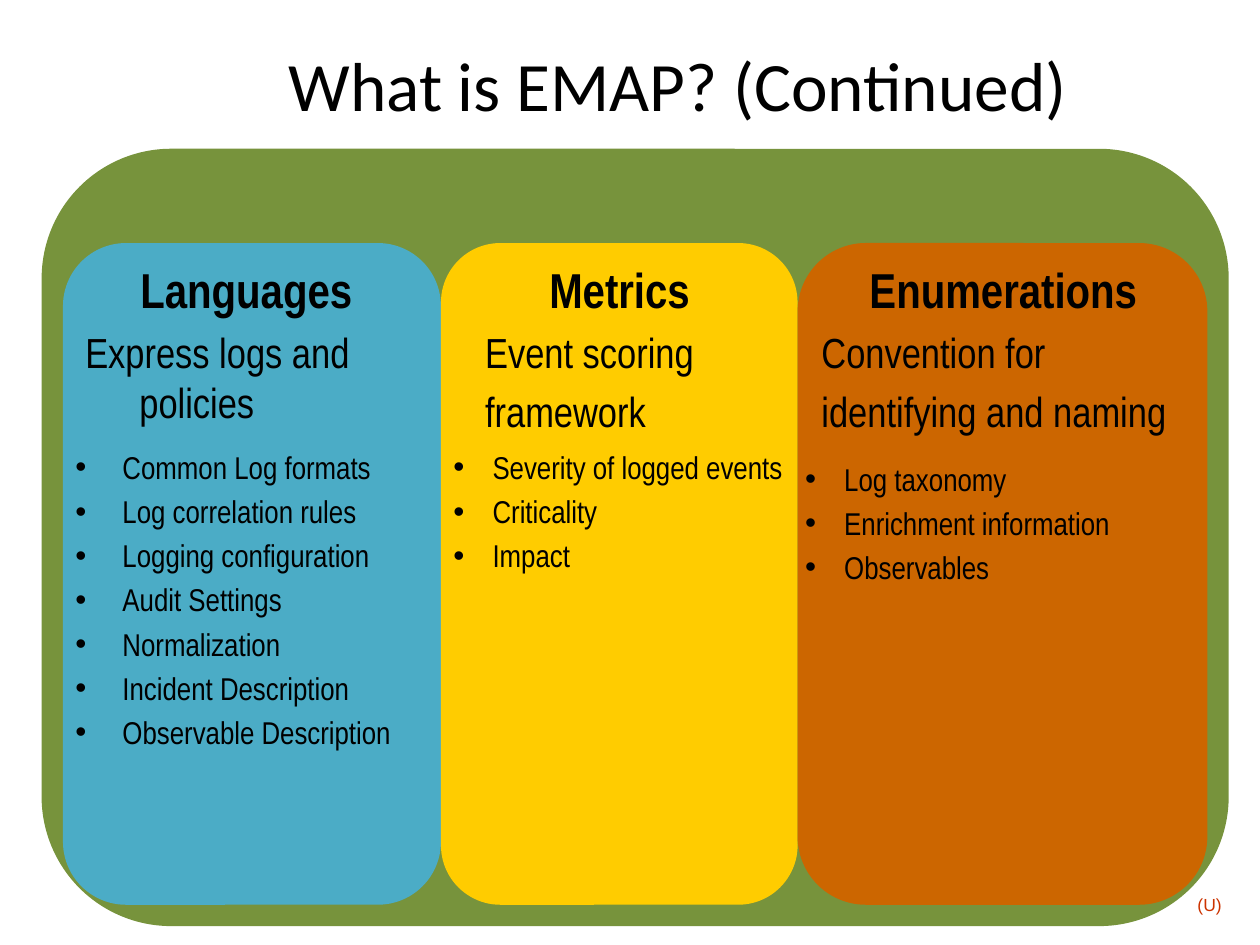
from dataclasses import dataclass

from lxml.etree import SubElement
from pptx import Presentation
from pptx.dml.color import RGBColor
from pptx.enum.shapes import MSO_SHAPE as Shape
from pptx.enum.text import MSO_ANCHOR as Anchor, PP_ALIGN as Align
from pptx.oxml.ns import qn
from pptx.util import Cm, Pt

COLORS = {
    "frame": "77933C",
    "languages": "4BACC6",
    "metrics": "FFCC00",
    "enumerations": "CC6600",
    "text": "000000",
    "marking": "CC3300",
}
BODY_FONT = "Arial Narrow"
PANEL_TOP, PANEL_HEIGHT = 4.9, 13.34
INTRO_TOP, INTRO_HEIGHT, INTRO_HANG = 0.2, 3.81, 1.09


@dataclass
class Panel:
    """One column; all lengths in cm, offsets counted from the panel's corner."""
    heading: str
    intro: list
    items: list
    color: str
    width: float
    intro_box: tuple   # left offset, width
    list_box: tuple    # left offset, top offset, width, height
    list_indent: tuple  # left margin, hanging


PANELS = [
    Panel("Languages", ["Express logs and policies"],
          ["Common Log formats", "Log correlation rules", "Logging configuration",
           "Audit Settings", "Normalization", "Incident Description",
           "Observable Description"],
          "languages", 7.62, (0.2, 6.99), (0, 4.01, 7.47, 8.08), (0.95, 0.95)),
    Panel("Metrics", ["Event scoring", "framework"],
          ["Severity of logged events", "Criticality", "Impact"],
          "metrics", 7.19, (0.64, 5.92), (-1.27, 4.01, 10.69, 5.28), (2.06, 0.79)),
    Panel("Enumerations", ["Convention for", "identifying and naming"],
          ["Log taxonomy", "Enrichment information", "Observables"],
          "enumerations", 8.26, (0.23, 7.83), (-1.37, 4.24, 10.69, 5.28), (2.06, 0.79)),
]


def add_rounded_box(slide, left, top, width, height, color):
    shape = slide.shapes.add_shape(
        Shape.ROUNDED_RECTANGLE, Cm(left), Cm(top), Cm(width), Cm(height))
    shape.shadow.inherit = False
    shape.fill.solid()
    shape.fill.fore_color.rgb = RGBColor.from_string(COLORS[color])
    shape.line.fill.background()


def add_text(slide, left, top, width, height, lines, size, font=BODY_FONT, color="text"):
    """Add a wrapping text box with one paragraph per line and return its frame."""
    box = slide.shapes.add_textbox(Cm(left), Cm(top), Cm(width), Cm(height))
    text_frame = box.text_frame
    text_frame.word_wrap = True
    text_frame.text = "\n".join(lines)
    for paragraph in text_frame.paragraphs:
        format_runs(paragraph, size, font, color)
    return text_frame


def format_runs(paragraph, size, font=BODY_FONT, color="text", bold=False):
    for run in paragraph.runs:
        run.font.size = Pt(size)
        run.font.name = font
        run.font.bold = bold
        run.font.color.rgb = RGBColor.from_string(COLORS[color])


def set_hanging(paragraph, margin, hanging, size, bullet=None):
    paragraph.space_before = Pt(0.2 * size)
    properties = paragraph._p.get_or_add_pPr()
    properties.set("marL", str(Cm(margin)))
    properties.set("indent", str(-Cm(hanging)))
    if bullet:
        SubElement(properties, qn("a:buFont"), typeface="Arial")
        SubElement(properties, qn("a:buChar"), char=bullet)


def add_title(slide, left, top, width, height):
    text_frame = add_text(slide, left, top, width, height,
                          ["What is EMAP? (Continued)"], 39.6, "Calibri")
    text_frame.vertical_anchor = Anchor.MIDDLE
    text_frame.paragraphs[0].alignment = Align.CENTER


def add_intro(slide, left, top, width, height, panel):
    text_frame = add_text(slide, left, top, width, height,
                          [panel.heading, *panel.intro], 24)
    heading, *intro = text_frame.paragraphs
    heading.alignment = Align.CENTER
    format_runs(heading, 28, bold=True)
    set_hanging(heading, INTRO_HANG, INTRO_HANG, 28)
    for paragraph in intro:
        set_hanging(paragraph, INTRO_HANG, INTRO_HANG, 24)


def add_bullets(slide, left, top, width, height, panel):
    text_frame = add_text(slide, left, top, width, height, panel.items, 18)
    for paragraph in text_frame.paragraphs:
        set_hanging(paragraph, *panel.list_indent, 18, "•")


def add_panel(slide, left, top, height, panel):
    add_rounded_box(slide, left, top, panel.width, height, panel.color)


def add_panel_text(slide, left, top, panel):
    intro_left, intro_width = panel.intro_box
    add_intro(slide, left + intro_left, top + INTRO_TOP, intro_width, INTRO_HEIGHT, panel)
    list_left, list_top, list_width, list_height = panel.list_box
    add_bullets(slide, left + list_left, top + list_top, list_width, list_height, panel)


def add_marking(slide, left, top, width, height):
    text_frame = add_text(slide, left, top, width, height, ["(U)"], 10, "Arial", "marking")
    text_frame.word_wrap = False
    text_frame.margin_left = text_frame.margin_right = 0
    text_frame.margin_top = text_frame.margin_bottom = 0
    text_frame.paragraphs[0].alignment = Align.CENTER


def main():
    presentation = Presentation()
    presentation.slide_width, presentation.slide_height = Cm(25.4), Cm(19.05)
    slide = presentation.slides.add_slide(presentation.slide_layouts[6])

    add_rounded_box(slide, 0.84, 3.0, 23.93, 15.67, "frame")
    add_title(slide, 1.5, 0.84, 24.33, 1.7)
    left = 1.27
    for panel in PANELS:
        add_panel(slide, left, PANEL_TOP, PANEL_HEIGHT, panel)
        add_panel_text(slide, left, PANEL_TOP, panel)
        left += panel.width
    add_marking(slide, 24.13, 18.03, 0.51, 0.43)

    presentation.save("out.pptx")


if __name__ == "__main__":
    main()
